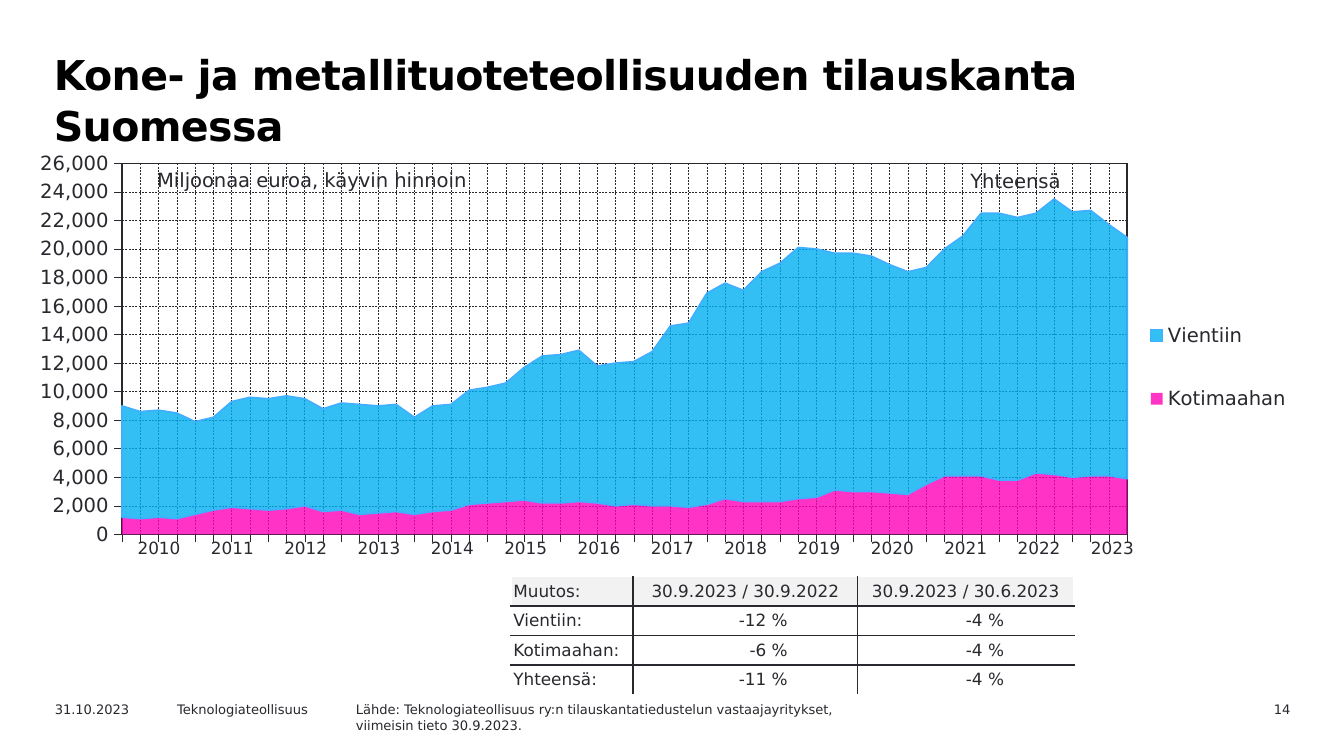
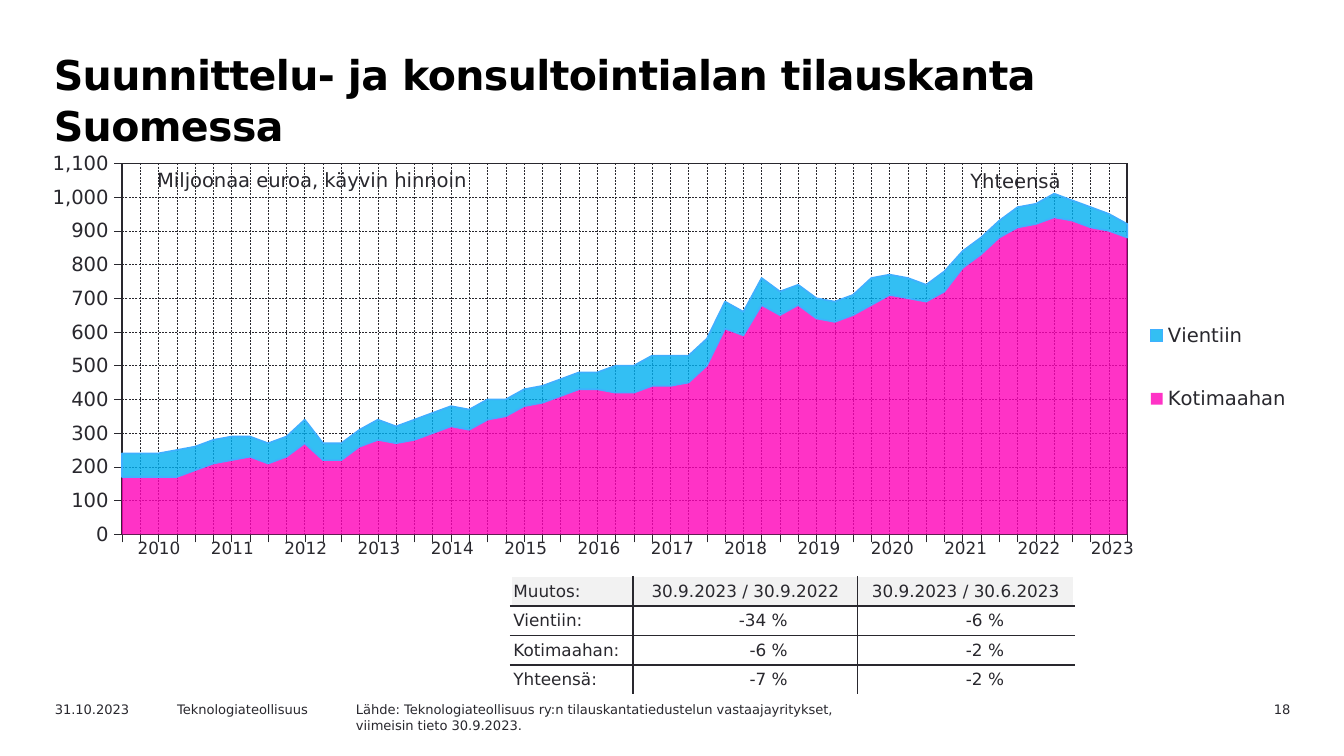
from lxml import etree
from pptx import Presentation
from pptx import util as u
from pptx.chart.data import CategoryChartData
from pptx.dml.color import RGBColor
from pptx.enum import chart as ch, dml, text
from pptx.oxml.ns import qn

INK, BLACK, WHITE, BAND = "29282E", "000000", "FFFFFF", "F2F2F2"
PINK, BLUE, BLUE_EDGE = "FF00B8", "00B0F0", "40AFFF"
FONT, CHART_FONT = "DejaVu Sans", "Arial"
COLS, ROWS = 100, 56.25
PLAIN_TABLE = "{2D5ABB26-0587-4C30-8999-92F81FD0307C}"
LEFT, CENTER, RIGHT = (text.PP_ALIGN.LEFT, text.PP_ALIGN.CENTER,
                       text.PP_ALIGN.RIGHT)

DATE, PUBLISHER = "31.10.2023", "Teknologiateollisuus"
SOURCE = ("Lähde: Teknologiateollisuus ry:n tilauskantatiedustelun vastaajayritykset,",
          "viimeisin tieto 30.9.2023.")
YEARS = [str(y) for y in range(2010, 2024)]
PERIODS = ["Muutos:", "30.9.2023 / 30.9.2022", "30.9.2023 / 30.6.2023"]

ORDER_BOOKS = [
    dict(
        title="Kone- ja metallituoteteollisuuden tilauskanta Suomessa",
        number="14", top=26000, step=2000,
        domestic=[
            1200, 1100, 1200, 1100, 1400, 1700, 1900, 1800, 1700, 1800, 2000, 1600,
            1700, 1400, 1500, 1600, 1400, 1600, 1700, 2100, 2200, 2300, 2400, 2200,
            2200, 2300, 2200, 2000, 2100, 2000, 2000, 1900, 2100, 2500, 2300, 2300,
            2300, 2500, 2600, 3100, 3000, 3000, 2900, 2800, 3500, 4100, 4100, 4100,
            3800, 3800, 4300, 4200, 4000, 4100, 4100, 3900],
        export=[
            7800, 7500, 7500, 7400, 6500, 6500, 7400, 7800, 7800, 7900, 7500, 7200,
            7500, 7700, 7500, 7500, 6800, 7400, 7400, 8000, 8100, 8300, 9300, 10300,
            10400, 10600, 9600, 10000, 10000, 10800, 12600, 12900, 14800, 15100, 14800,
            16100, 16700, 17600, 17400, 16600, 16700, 16500, 16000, 15600, 15200, 15900,
            16800, 18400, 18700, 18400, 18200, 19300, 18600, 18600, 17600, 16900],
        changes=[["Vientiin:", "-12 %", "-4 %"],
                 ["Kotimaahan:", "-6 %", "-4 %"],
                 ["Yhteensä:", "-11 %", "-4 %"]]),
    dict(
        title="Suunnittelu- ja konsultointialan tilauskanta Suomessa",
        number="18", top=1100, step=100,
        domestic=[
            170, 170, 170, 170, 190, 210, 220, 230, 210, 230, 270, 220, 220, 260,
            280, 270, 280, 300, 320, 310, 340, 350, 380, 390, 410, 430, 430, 420,
            420, 440, 440, 450, 500, 610, 590, 680, 650, 680, 640, 630, 650, 680,
            710, 700, 690, 720, 790, 830, 880, 910, 920, 940, 930, 910, 900, 880],
        export=[
            70, 70, 70, 80, 70, 70, 70, 60, 60, 60, 70, 50, 50, 50,
            60, 50, 60, 60, 60, 60, 60, 50, 50, 50, 50, 50, 50, 80,
            80, 90, 90, 80, 80, 80, 70, 80, 70, 60, 60, 60, 60, 80,
            60, 60, 50, 60, 50, 50, 50, 60, 60, 70, 60, 60, 50, 40],
        changes=[["Vientiin:", "-34 %", "-6 %"],
                 ["Kotimaahan:", "-6 %", "-2 %"],
                 ["Yhteensä:", "-7 %", "-2 %"]]),
]


def rgb(color):
    return RGBColor.from_string(color)


def style(font, size, color=INK, name=FONT, bold=False):
    font.size, font.name, font.bold = u.Pt(size), name, bold
    font.color.rgb = rgb(color)


def stroke(line, color, width, dash=None):
    line.color.rgb = rgb(color)
    line.width = u.Pt(width)
    if dash:
        line.dash_style = dash


def set_margins(obj, left, top, right, bottom):
    obj.margin_left, obj.margin_top = u.Inches(left), u.Inches(top)
    obj.margin_right, obj.margin_bottom = u.Inches(right), u.Inches(bottom)


def manual_layout(x, y, w, h, inner=False):
    """Chart layout element, in shares of the chart's size."""
    layout = etree.Element(qn("c:layout"))
    manual = etree.SubElement(layout, qn("c:manualLayout"))
    parts = [("layoutTarget", "inner")] if inner else []
    parts += [("xMode", "edge"), ("yMode", "edge"),
              ("x", x), ("y", y), ("w", w), ("h", h)]
    for tag, val in parts:
        etree.SubElement(manual, qn("c:" + tag)).set("val", str(val))
    return layout


def drop_layout(parent):
    for old in parent.findall(qn("c:layout")):
        parent.remove(old)


def add_line(parent, tag, color, width):
    ln = etree.SubElement(parent, qn(tag), w=str(u.Pt(width)))
    fill = etree.SubElement(ln, qn("a:solidFill"))
    etree.SubElement(fill, qn("a:srgbClr"), val=color)
    return ln


def border(cell, **sides):
    """Colour the cell's sides, given as L, R, T, B."""
    tcPr = cell._tc.get_or_add_tcPr()
    for i, side in enumerate("LRTB"):
        tcPr.insert(i, add_line(tcPr, "a:ln" + side, sides[side], 1))


class Deck:
    def __init__(self):
        self.prs = Presentation()
        self.prs.slide_width, self.prs.slide_height = u.Inches(10), u.Inches(5.625)
        self.s = None

    def new_slide(self):
        self.s = self.prs.slides.add_slide(self.prs.slide_layouts[5])

    def grid(self, x, y, w, h):
        col, row = self.prs.slide_width / COLS, self.prs.slide_height / ROWS
        return round(x * col), round(y * row), round(w * col), round(h * row)

    def add_text(self, p, words, size, color=INK, bold=False, align=LEFT):
        p.alignment = align
        r = p.add_run()
        r.text = words
        style(r.font, size, color, bold=bold)
        return r

    def title(self, words):
        sp = self.s.shapes.title
        sp.left, sp.top, sp.width, sp.height = self.grid(2.8, 3.1, 87.4, 7.1)
        tf = sp.text_frame
        tf.word_wrap, tf.auto_size = True, text.MSO_AUTO_SIZE.NONE
        tf.vertical_anchor = text.MSO_ANCHOR.TOP
        set_margins(tf, 0.12, 0.05, 0.1, 0.05)
        p = tf.paragraphs[0]
        p.line_spacing = u.Pt(27)
        r = self.add_text(p, words, 22, BLACK, True)
        r._r.get_or_add_rPr().set("spc", "-30")

    def label(self, box, *lines, size=7, align=LEFT, margins=None, wrap=True):
        tf = self.s.shapes.add_textbox(*self.grid(*box)).text_frame
        tf.word_wrap = wrap
        if margins:
            set_margins(tf, *margins)
        for i, line in enumerate(lines):
            p = tf.add_paragraph() if i else tf.paragraphs[0]
            self.add_text(p, line, size, align=align)

    def footer(self, number):
        y, h = 51.7, 1.8
        self.label((87.6, y, 9.4, h), number, align=RIGHT)
        self.label((3.1, y, 10, h), DATE)
        self.label((12.2, y, 14.2, h), PUBLISHER)
        self.label((25.5, y, 50, 2.6), *SOURCE)

    def area_chart(self, domestic, export, top, step):
        data = CategoryChartData(number_format="#,##0")
        data.categories = [str(i + 1) for i in range(len(domestic))]
        data.add_series("Kotimaahan", domestic)
        data.add_series("Vientiin", export)
        chart = self.s.shapes.add_chart(ch.XL_CHART_TYPE.AREA_STACKED,
                                        *self.grid(2, 11.1, 96.9, 31.2), data).chart
        chart.has_title = False
        style(chart.font, 18.2, name=CHART_FONT, bold=True)
        plot = chart.plots[0]
        plot.vary_by_categories = False
        for series, color in zip(plot.series, (PINK, BLUE)):
            series.format.fill.solid()
            series.format.fill.fore_color.rgb = rgb(color)
            clr = series._element.find(".//" + qn("a:srgbClr"))
            etree.SubElement(clr, qn("a:alpha"), val="80000")
            series.format.line.fill.background()
        stroke(plot.series[1].format.line, BLUE_EDGE, 0.88)

        quarters, euros = chart.category_axis, chart.value_axis
        for axis in (quarters, euros):
            axis.major_tick_mark = ch.XL_TICK_MARK.OUTSIDE
            axis.minor_tick_mark = ch.XL_TICK_MARK.NONE
            axis.has_major_gridlines = True
            stroke(axis.format.line, INK, 0.22)
            stroke(axis.major_gridlines.format.line, INK, 0.25, dml.MSO_LINE.DASH)
        quarters.tick_label_position = ch.XL_TICK_LABEL_POSITION.NONE
        euros.minimum_scale, euros.maximum_scale, euros.major_unit = 0, top, step
        euros.tick_labels.number_format = "#,##0"
        euros.tick_labels.number_format_is_linked = False
        style(euros.tick_labels.font, 10.5)
        for cross in euros._element.iter(qn("c:crossBetween")):
            cross.set("val", "midCat")

        chart.has_legend = True
        legend = chart.legend
        legend.position = ch.XL_LEGEND_POSITION.RIGHT
        legend.include_in_layout = False
        style(legend.font, 10.5)
        drop_layout(legend._element)
        legend._element.find(qn("c:legendPos")).addnext(
            manual_layout(0.85, 0.32, 0.13, 0.4))

        area = chart._chartSpace.find(".//" + qn("c:plotArea"))
        drop_layout(area)
        area.insert(0, manual_layout(0.073, 0.034, 0.772, 0.885, inner=True))
        frame = etree.SubElement(area, qn("c:spPr"))
        etree.SubElement(frame, qn("a:noFill"))
        add_line(frame, "a:ln", INK, 0.9)

    def plain_table(self, box, rows, cols):
        table = self.s.shapes.add_table(rows, cols, *self.grid(*box)).table
        table.first_row = table.horz_banding = False
        table._tbl.tblPr.find(qn("a:tableStyleId")).text = PLAIN_TABLE
        return table

    def year_row(self):
        table = self.plain_table((9.1, 39.6, 76.4, 3.1), 1, len(YEARS))
        for cell, year in zip(table.iter_cells(), YEARS):
            cell.fill.background()
            self.add_text(cell.text_frame.paragraphs[0], year, 9, align=CENTER)

    def change_table(self, changes):
        rows = [PERIODS] + changes
        last_row, last_col = len(rows) - 1, len(PERIODS) - 1
        table = self.plain_table((38, 42.9, 41.9, 8.8), len(rows), len(PERIODS))
        for column, width in zip(table.columns, (0.91, 1.67, 1.61)):
            column.width = u.Inches(width)
        for i, row in enumerate(rows):
            for j, words in enumerate(row):
                cell = table.cell(i, j)
                figure = i > 0 and j > 0
                cell.fill.solid()
                cell.fill.fore_color.rgb = rgb(WHITE if i else BAND)
                cell.vertical_anchor = text.MSO_ANCHOR.MIDDLE
                set_margins(cell, 0.02, 0.02, 0.52 if figure else 0.02, 0.02)
                border(cell, L=INK if j else WHITE, T=INK if i else WHITE,
                       R=INK if j < last_col else WHITE,
                       B=INK if i < last_row else WHITE)
                align = RIGHT if figure else CENTER if j else LEFT
                self.add_text(cell.text_frame.paragraphs[0], words, 9, align=align)


def main():
    deck = Deck()
    for book in ORDER_BOOKS:
        deck.new_slide()
        deck.title(book["title"])
        deck.footer(book["number"])
        deck.area_chart(book["domestic"], book["export"], book["top"], book["step"])
        deck.label((10.8, 12, 26, 2.7), "Miljoonaa euroa, käyvin hinnoin", size=10.5,
                   margins=(0.09, 0.05, 0.09, 0.05), wrap=False)
        deck.change_table(book["changes"])
        deck.label((71.3, 12.2, 10.6, 2.7), "Yhteensä", size=10.5,
                   margins=(0.09, 0.04, 0.09, 0.04))
        deck.year_row()
    deck.prs.save("out.pptx")


if __name__ == "__main__":
    main()
